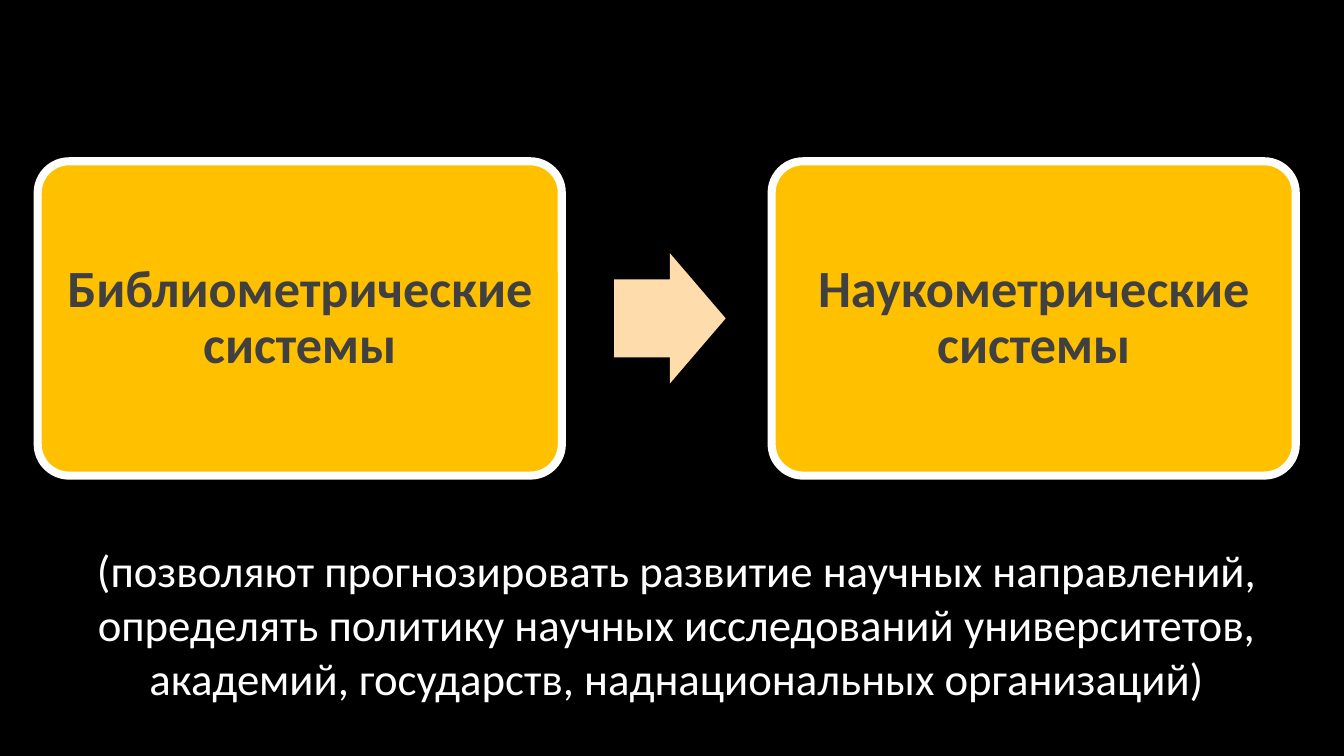
from pptx import Presentation
from pptx.dml.color import RGBColor
from pptx.enum.shapes import MSO_SHAPE as Shape
from pptx.enum.text import MSO_ANCHOR as Anchor, MSO_AUTO_SIZE as AutoSize, PP_ALIGN as Align
from pptx.util import Pt

BLACK = RGBColor(0x00, 0x00, 0x00)
WHITE = RGBColor(0xFF, 0xFF, 0xFF)
AMBER = RGBColor(0xFF, 0xC0, 0x00)
PEACH = RGBColor(0xFF, 0xDC, 0xAB)
DARK_GREY = RGBColor(0x40, 0x40, 0x40)

SYSTEMS = ["Библиометрические системы", "Наукометрические системы"]
PURPOSE = (
    "(позволяют прогнозировать развитие научных направлений, "
    "определять политику научных исследований университетов, "
    "академий, государств, наднациональных организаций)"
)

BOX_LEFT, BOX_TOP, BOX_WIDTH, BOX_HEIGHT = 20.2, 86.4, 280.8, 168.4
BOX_STEP = 393.2
BOX_INSET = 8.64
ARROW_LEFT, ARROW_WIDTH, ARROW_HEIGHT = 329, 59.8, 69.8


def add_block(slide, kind, left, top, width, height, fill, adjustments):
    """Add a filled preset shape without outline or shadow."""
    shape = slide.shapes.add_shape(kind, Pt(left), Pt(top), Pt(width), Pt(height))
    for index, value in enumerate(adjustments):
        shape.adjustments[index] = value
    shape.shadow.inherit = False
    shape.fill.solid()
    shape.fill.fore_color.rgb = fill
    shape.line.fill.background()
    return shape


def write_text(shape, text, size, color, bold=False, spacing=1.0, anchor=Anchor.TOP):
    frame = shape.text_frame
    frame.word_wrap = True
    frame.vertical_anchor = anchor
    paragraph = frame.paragraphs[0]
    paragraph.text = text
    paragraph.alignment = Align.CENTER
    paragraph.line_spacing = spacing
    font = paragraph.font
    font.name, font.size, font.bold = "Calibri", Pt(size), bold
    font.color.rgb = color
    return frame


def main():
    presentation = Presentation()
    presentation.slide_width, presentation.slide_height = Pt(720), Pt(405)
    slide = presentation.slides.add_slide(presentation.slide_layouts[6])
    slide.background.fill.solid()
    slide.background.fill.fore_color.rgb = BLACK

    for index, system in enumerate(SYSTEMS):
        box = add_block(slide, Shape.ROUNDED_RECTANGLE, BOX_LEFT + index * BOX_STEP,
                        BOX_TOP, BOX_WIDTH, BOX_HEIGHT, AMBER, [0.1])
        box.line.color.rgb = WHITE
        box.line.width = Pt(4.33)
        frame = write_text(box, system, 28, DARK_GREY, bold=True, spacing=0.9,
                           anchor=Anchor.MIDDLE)
        frame.margin_left = frame.margin_right = Pt(BOX_INSET)
        frame.margin_top = frame.margin_bottom = Pt(BOX_INSET)

    arrow_top = BOX_TOP + (BOX_HEIGHT - ARROW_HEIGHT) / 2
    add_block(slide, Shape.RIGHT_ARROW, ARROW_LEFT, arrow_top, ARROW_WIDTH,
              ARROW_HEIGHT, PEACH, [0.6, 0.5])

    caption = slide.shapes.add_textbox(Pt(25.2), Pt(287.3), Pt(674.6), Pt(94.3))
    frame = write_text(caption, PURPOSE, 24, WHITE)
    frame.auto_size = AutoSize.SHAPE_TO_FIT_TEXT

    presentation.save("out.pptx")


if __name__ == "__main__":
    main()
